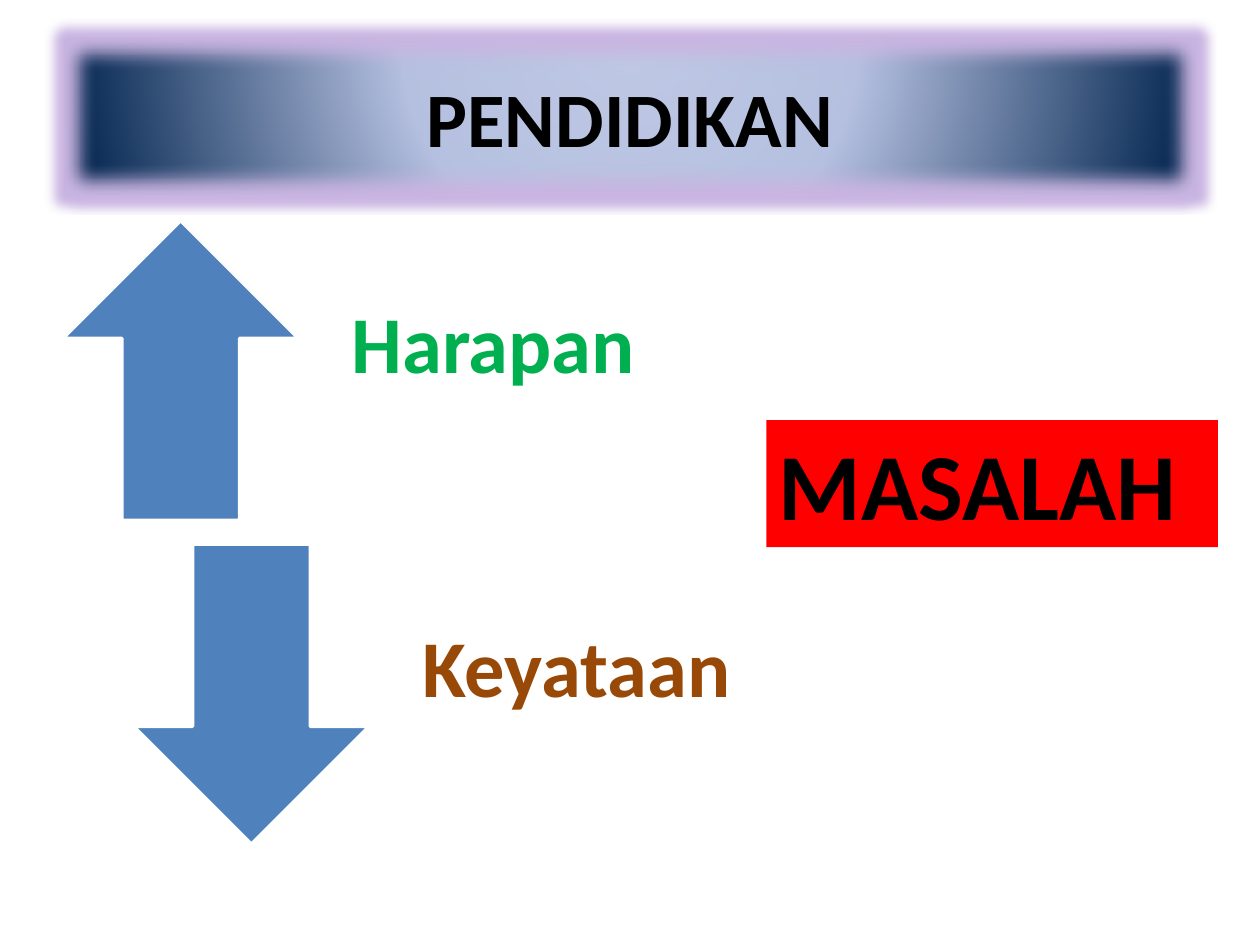
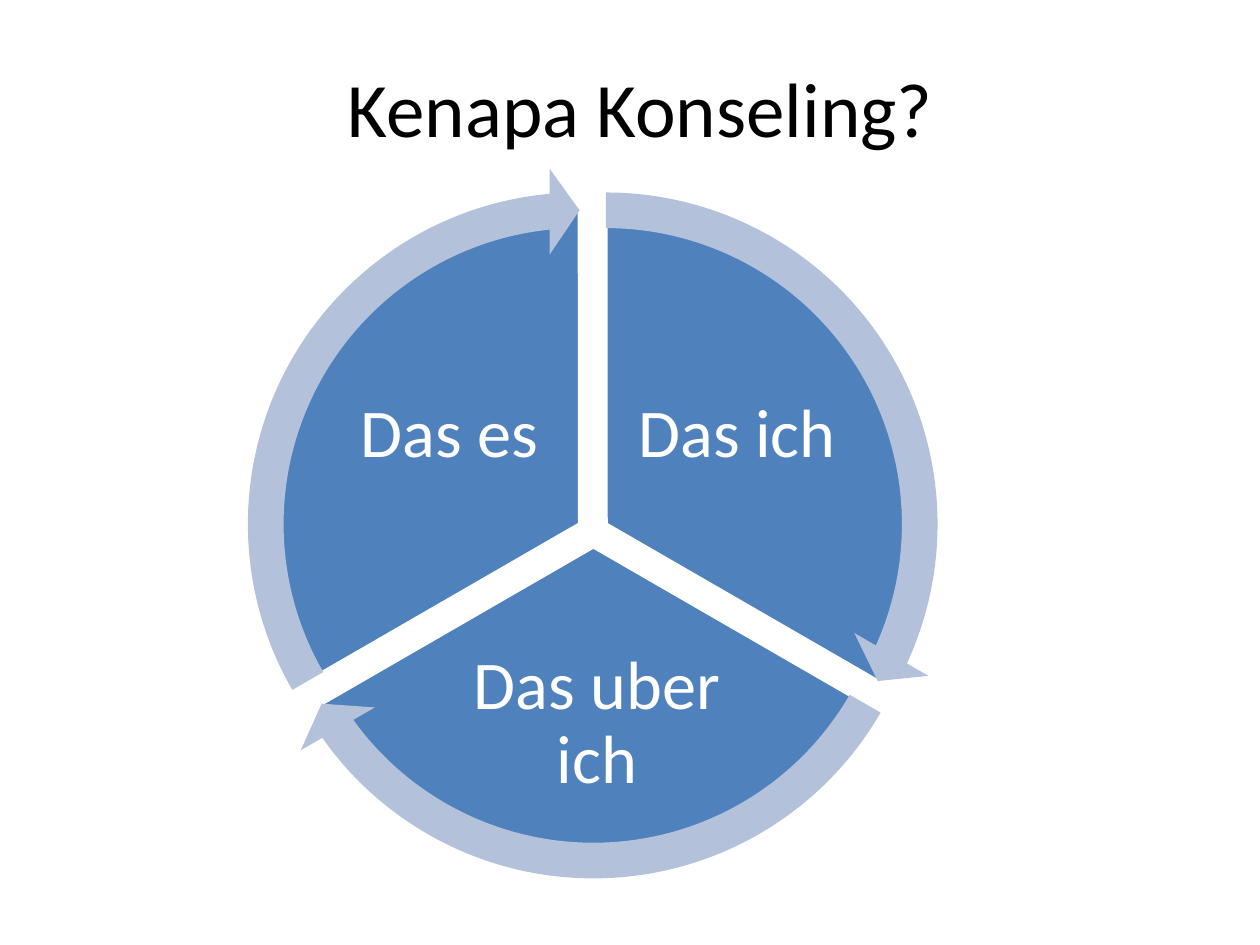
import pptx
import pptx.dml.color
import pptx.enum.shapes
import pptx.enum.text
import pptx.oxml
import pptx.oxml.ns
import pptx.util

Pt = pptx.util.Pt
SHAPE = pptx.enum.shapes.MSO_SHAPE
ALIGN = pptx.enum.text.PP_ALIGN
ANCHOR = pptx.enum.text.MSO_ANCHOR

FONT = "Calibri"
COLORS = {
    "black": "000000", "white": "FFFFFF", "blue": "4F81BD", "pale": "B3C1DB",
    "green": "00B050", "brown": "984807", "red": "FF0000", "glow": "7A46B6",
    "band_in": "BFC9E5", "band_mid": "B5C0E0", "band_out": "00234D",
}
TITLE_ONLY = 5
PIE_SIZE, ARROW_SIZE = 363, 407.5


def rgb(name):
    return pptx.dml.color.RGBColor.from_string(COLORS[name])


def put_text(s, text, size=44, color="black", bold=False, align=ALIGN.LEFT,
             anchor=ANCHOR.MIDDLE, insets=(7.2, 3.6, 7.2, 3.6), spacing=1.0):
    tf = s.text_frame
    tf.word_wrap = True
    tf.vertical_anchor = anchor
    tf.margin_left, tf.margin_top, tf.margin_right, tf.margin_bottom = map(Pt, insets)
    p = tf.paragraphs[0]
    p.alignment = align
    p.line_spacing = spacing
    r = p.add_run()
    r.text = text
    r.font.name, r.font.size, r.font.bold = FONT, Pt(size), bold
    r.font.color.rgb = rgb(color)


def add_label(sp, box, text, **fmt):
    put_text(sp.add_textbox(*map(Pt, box)), text, spacing=0.9, **fmt)


def add_shape(sp, kind, box, fill, line=None, adjustments=()):
    s = sp.add_shape(kind, *map(Pt, box))
    s.shadow.inherit = False
    s.fill.solid()
    s.fill.fore_color.rgb = rgb(fill)
    if line:
        s.line.color.rgb = rgb(line)
        s.line.width = Pt(2)
    else:
        s.line.fill.background()
    for i, value in enumerate(adjustments):
        s.adjustments[i] = value
    return s


def add_titled_slide(prs, text, box, bold=False):
    slide = prs.slides.add_slide(prs.slide_layouts[TITLE_ONLY])
    title = slide.shapes.title
    title.left, title.top, title.width, title.height = map(Pt, box)
    put_text(title, text, bold=bold, align=ALIGN.CENTER)
    return slide


def add_glowing_band(title):
    """Radial gradient with soft edges and a glow around them."""
    ns = pptx.oxml.ns.nsdecls("a")
    stops = "".join(
        f'<a:gs pos="{pos * 1000}"><a:srgbClr val="{COLORS[name]}"/></a:gs>'
        for pos, name in ((0, "band_in"), (40, "band_mid"), (100, "band_out")))
    gradient = (
        f'<a:gradFill {ns} rotWithShape="1"><a:gsLst>{stops}</a:gsLst>'
        '<a:path path="circle"><a:fillToRect l="50000" t="-80000" r="50000" b="180000"/>'
        '</a:path></a:gradFill>')
    effects = (
        f'<a:effectLst {ns}><a:glow rad="{Pt(11)}"><a:srgbClr val="{COLORS["glow"]}">'
        '<a:alpha val="40000"/></a:srgbClr></a:glow>'
        f'<a:softEdge rad="{Pt(10)}"/></a:effectLst>')
    for xml in (gradient, effects):
        title.element.spPr.append(pptx.oxml.parse_xml(xml))


def add_education_slide(prs):
    slide = add_titled_slide(prs, "PENDIDIKAN", (36, 21.6, 648, 90), bold=True)
    add_glowing_band(slide.shapes.title)
    sp = slide.shapes

    # Opposing arrows, each with its label on the right
    for kind, x, y, text, color in (
            (SHAPE.UP_ARROW, 36, 126, "Harapan", "green"),
            (SHAPE.DOWN_ARROW, 76.4, 311, "Keyataan", "brown")):
        add_shape(sp, kind, (x, y, 134.6, 171.4), "blue", line="white")
        add_label(sp, (x + 139, y, 228, 171.4), text, size=46, color=color,
                  bold=True, insets=(26, 0, 26, 26))

    # Resulting problem
    box = add_shape(sp, SHAPE.RECTANGLE, (438, 240, 258, 72.7), "red")
    put_text(box, "MASALAH", size=54, bold=True, anchor=ANCHOR.TOP)


def add_counselling_slide(prs):
    sp = add_titled_slide(prs, "Kenapa Konseling?", (42, 24, 648, 74)).shapes

    # Sector centre, start and end angle, arrow end angle, label and its box
    sectors = (
        ((346.3, 299.5), 162, 18, 14.73, "Das ich", (356.4, 195, 129.6, 108)),
        ((339.1, 312.5), 18, 90, 86.72, "Das uber ich", (244, 366.5, 194.4, 95)),
        ((331.2, 299.5), 90, 162, 158.73, "Das es", (192.2, 195, 129.6, 108)),
    )

    def square(centre, size):
        return centre[0] - size / 2, centre[1] - size / 2, size, size

    for centre, start, end, _, text, box in sectors:
        add_shape(sp, SHAPE.PIE, square(centre, PIE_SIZE), "blue", line="white",
                  adjustments=(start, end))
        add_label(sp, box, text, size=39, color="white", align=ALIGN.CENTER,
                  insets=(3.6,) * 4)

    # Arrows around the sectors
    for centre, start, _, tip, _, _ in sectors:
        add_shape(sp, SHAPE.CIRCULAR_ARROW, square(centre, ARROW_SIZE), "pale",
                  adjustments=(0.05, 3.28, tip, start, 0.06))


def main():
    prs = pptx.Presentation()
    prs.slide_width, prs.slide_height = Pt(720), Pt(540)
    add_education_slide(prs)
    add_counselling_slide(prs)
    prs.save("out.pptx")


if __name__ == "__main__":
    main()
